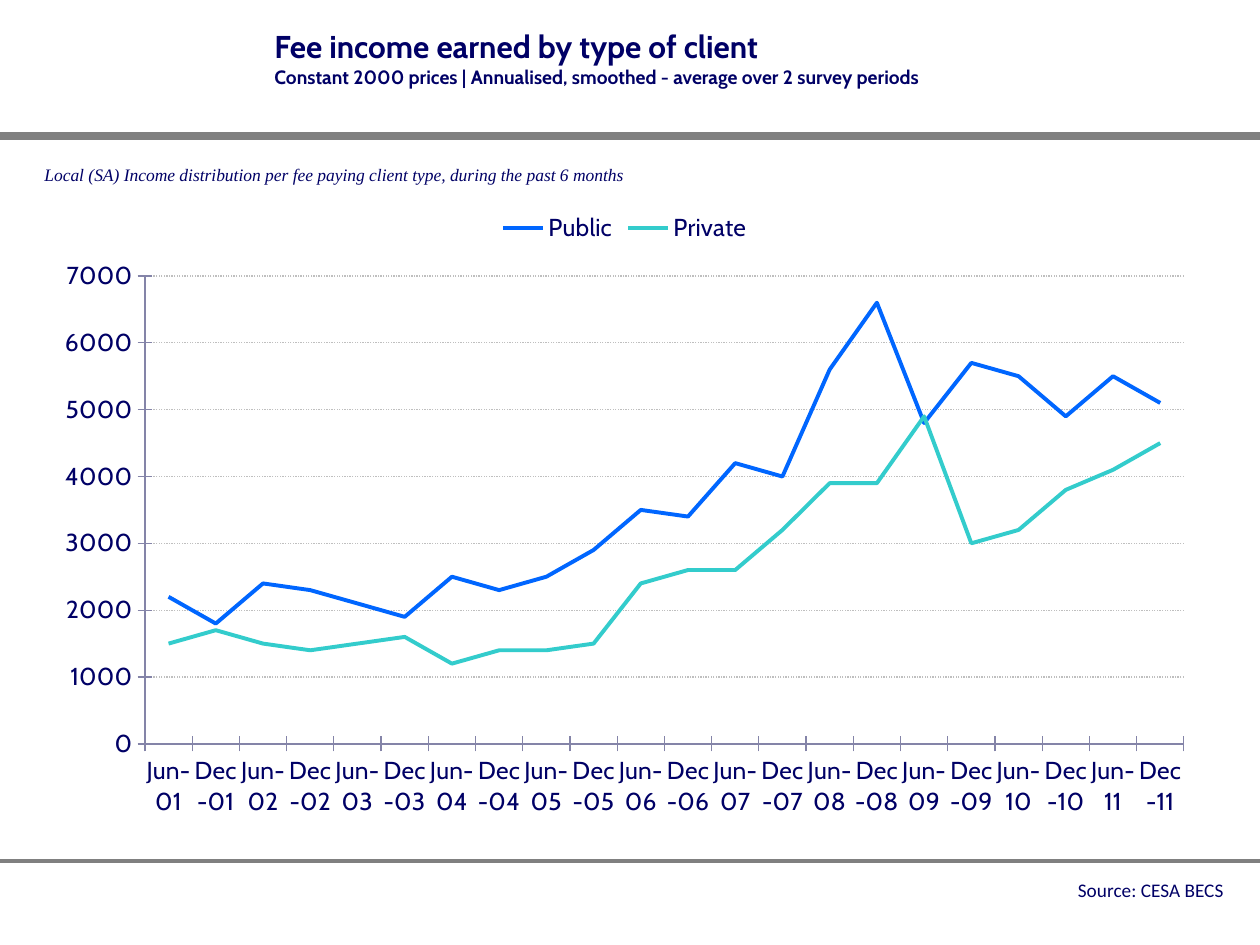
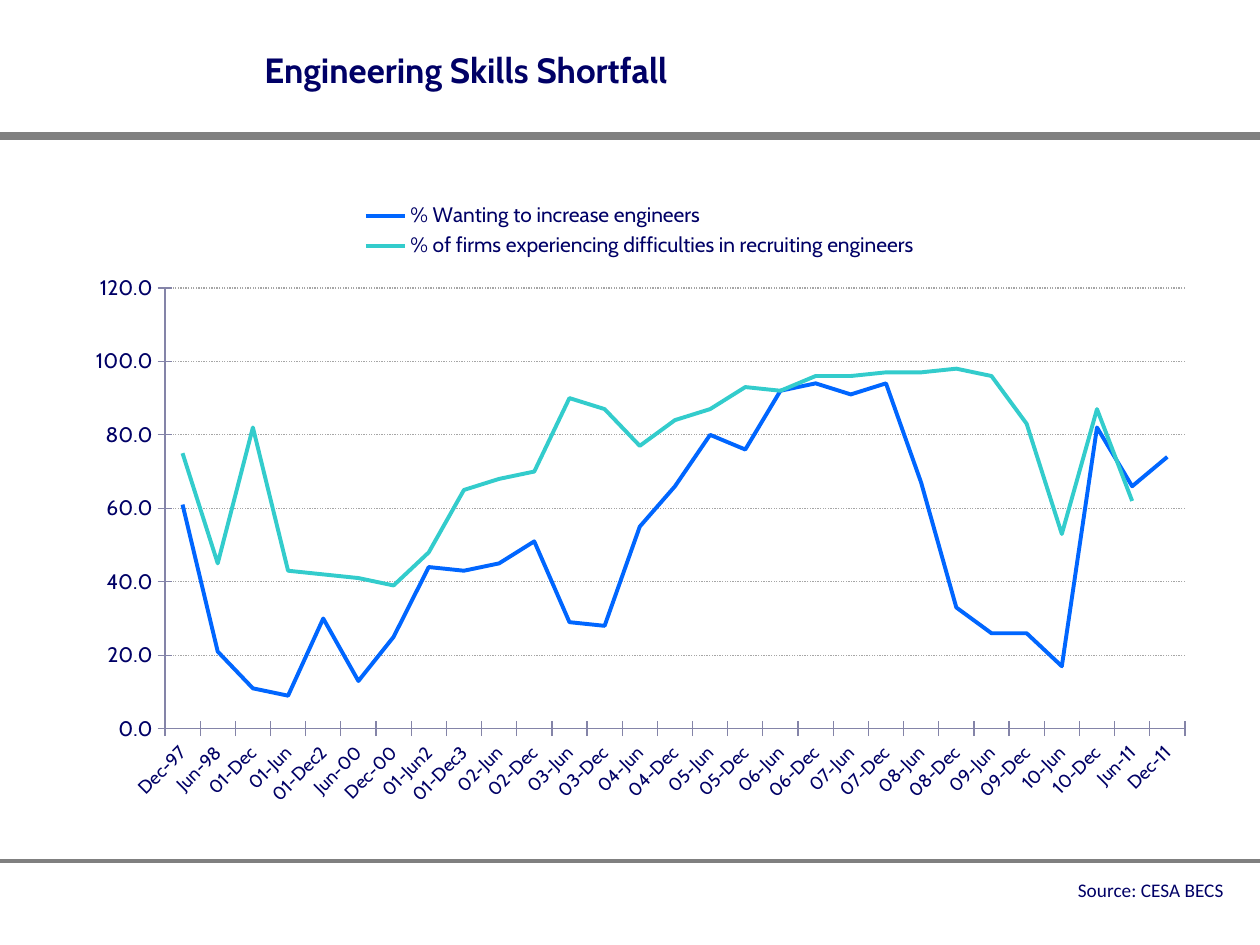
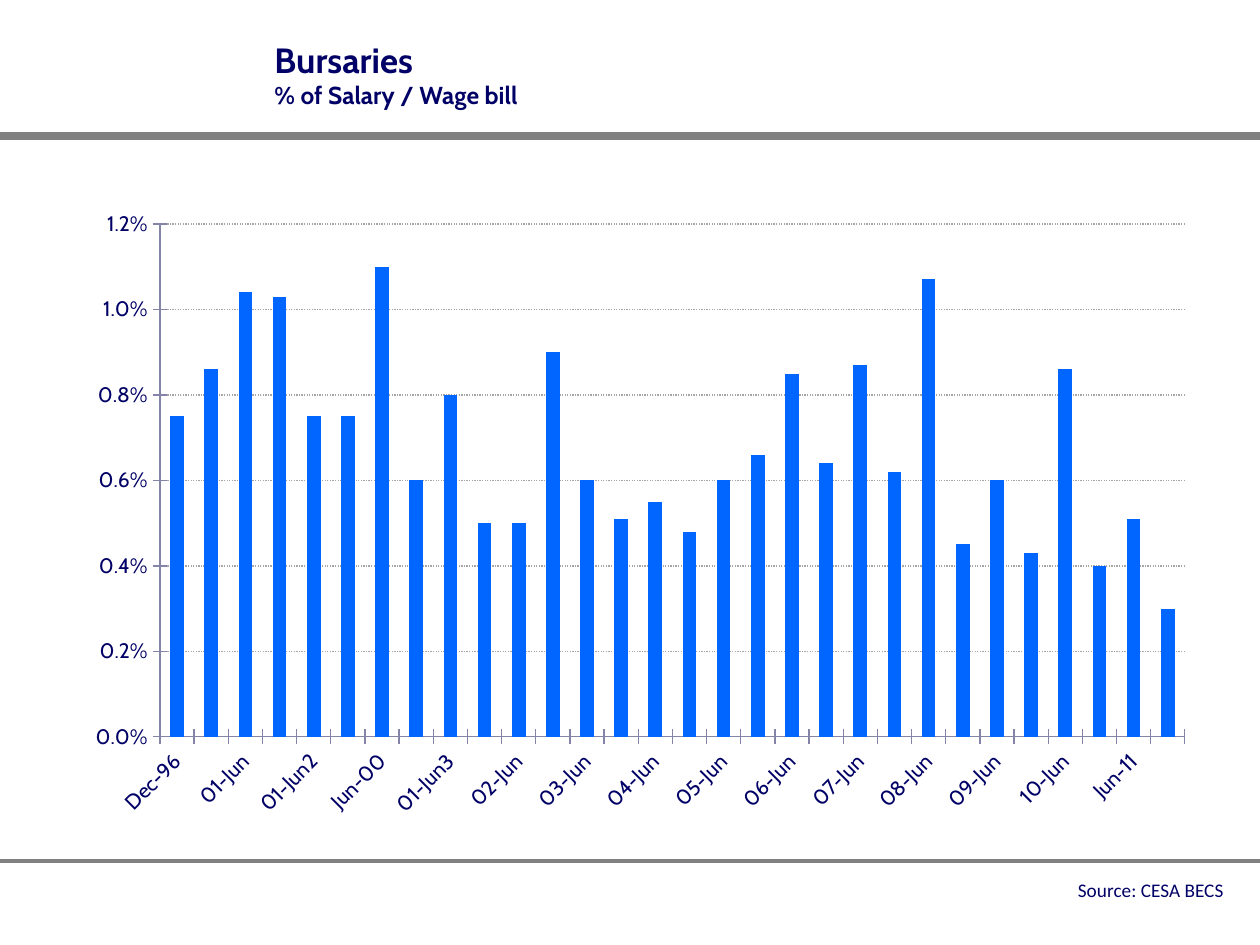
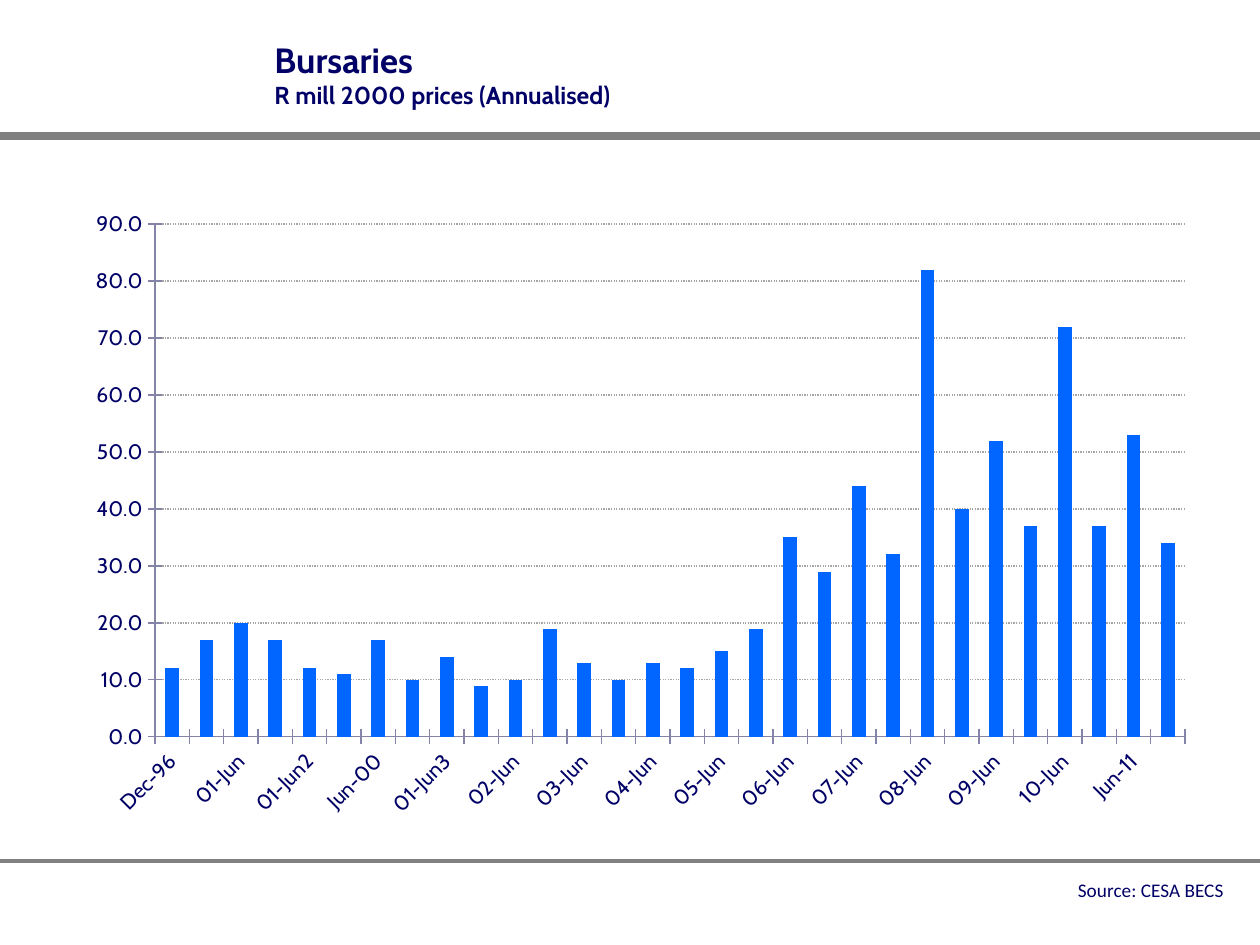
from dataclasses import dataclass
from typing import Optional

import pptx
import pptx.chart.data
import pptx.dml.color
import pptx.enum.chart
import pptx.enum.dml
import pptx.enum.shapes
import pptx.enum.text
import pptx.oxml
import pptx.oxml.ns
import pptx.util

PX = 914400 / 126
SLIDE_W, SLIDE_H = 1260, 945
NAVY, GREY, AXIS = "000066", "808080", "8484A8"
BLUE, TEAL = "0066FF", "33CCCC"
HEAD_FONT, NOTE_FONT, SOURCE_FONT = "Cabin", "Times New Roman", "Calibri"
LINE = pptx.enum.chart.XL_CHART_TYPE.LINE
COLUMN = pptx.enum.chart.XL_CHART_TYPE.COLUMN_CLUSTERED


@dataclass(frozen=True)
class Box:
    x: int
    y: int
    w: int
    h: int


@dataclass(frozen=True)
class Line:
    text: str
    size: float
    font: str = HEAD_FONT
    bold: bool = False
    italic: bool = False


@dataclass(frozen=True)
class Rule:
    y: int
    width: float


@dataclass(frozen=True)
class Series:
    name: str
    values: list[Optional[float]]
    color: str = BLUE


@dataclass(frozen=True)
class ChartSpec:
    kind: pptx.enum.chart.XL_CHART_TYPE
    box: Box
    plot: Box
    categories: list[str]
    series: list[Series]
    top: float
    step: float
    number_format: str
    size: float = 12
    category_size: float = 12
    grid: str = "A6A6A6"
    rotation: int = -45


@dataclass(frozen=True)
class Page:
    title_box: Box
    title: list[Line]
    chart: ChartSpec
    note: Optional[Line] = None


RULES = [Rule(136, 5), Rule(861, 2)]
SOURCE_BOX = Box(1063, 872, 173, 37)
SOURCE = Line("Source: CESA BECS", 11, SOURCE_FONT)
NOTE_BOX = Box(32, 158, 614, 34)
BURSARY_TITLE_BOX = Box(262, 32, 851, 84)
BURSARY_CHART_BOX = Box(73, 199, 1134, 630)

HALF_YEARS = [f"{month}-{year:02d}" for year in range(1, 12) for month in ("Jun", "Dec")]
RECENT = [f"{year:02d}-{month}" for year in range(2, 11) for month in ("Jun", "Dec")]
RECENT += ["Jun-11", "Dec-11"]
SKILL_PERIODS = ["Dec-97", "Jun-98", "01-Dec", "01-Jun", "01-Dec2", "Jun-00", "Dec-00",
                 "01-Jun2", "01-Dec3"] + RECENT
BURSARY_PERIODS = ["Dec-96", "Dec-97", "01-Jun", "01-Dec", "01-Jun2", "Dec-99", "Jun-00",
                   "Dec-00", "01-Jun3", "01-Dec4"] + RECENT

PAGES = [
    Page(
        Box(262, 21, 945, 74),
        [Line("Fee income earned by type of client", 18, bold=True),
         Line("Constant 2000 prices | Annualised, smoothed - average over 2 survey periods",
              11, bold=True)],
        ChartSpec(
            LINE, Box(42, 199, 1166, 630), Box(145, 276, 1039, 468), HALF_YEARS,
            [Series("Public", [2200, 1800, 2400, 2300, 2100, 1900, 2500, 2300, 2500, 2900, 3500,
                               3400, 4200, 4000, 5600, 6600, 4800, 5700, 5500, 4900, 5500, 5100]),
             Series("Private", [1500, 1700, 1500, 1400, 1500, 1600, 1200, 1400, 1400, 1500, 2400,
                                2600, 2600, 3200, 3900, 3900, 4900, 3000, 3200, 3800, 4100, 4500],
                    TEAL)],
            7000, 1000, "0", size=14, category_size=14, grid="BFBFBF", rotation=0),
        Line("Local (SA) Income distribution per fee paying client type, during the past 6 months",
             10, NOTE_FONT, italic=True),
    ),
    Page(
        Box(252, 42, 882, 55),
        [Line("Engineering Skills Shortfall", 20, bold=True)],
        ChartSpec(
            LINE, Box(73, 189, 1134, 630), Box(165, 288, 1020, 441), SKILL_PERIODS,
            [Series("% Wanting to increase engineers",
                    [61, 21, 11, 9, 30, 13, 25, 44, 43, 45, 51, 29, 28, 55, 66, 80, 76, 92, 94,
                     91, 94, 67, 33, 26, 26, 17, 82, 66, 74]),
             Series("% of firms experiencing difficulties in recruiting engineers",
                    [75, 45, 82, 43, 42, 41, 39, 48, 65, 68, 70, 90, 87, 77, 84, 87, 93, 92, 96,
                     96, 97, 97, 98, 96, 83, 53, 87, 62, None], TEAL)],
            120, 20, "0.0", category_size=10.5),
    ),
    Page(
        BURSARY_TITLE_BOX,
        [Line("Bursaries", 20, bold=True), Line("% of Salary / Wage bill", 14, bold=True)],
        ChartSpec(
            COLUMN, BURSARY_CHART_BOX, Box(160, 224, 1025, 513), BURSARY_PERIODS,
            [Series("Series 1",
                    [0.0075, 0.0086, 0.0104, 0.0103, 0.0075, 0.0075, 0.011, 0.006, 0.008, 0.005,
                     0.005, 0.009, 0.006, 0.0051, 0.0055, 0.0048, 0.006, 0.0066, 0.0085, 0.0064,
                     0.0087, 0.0062, 0.0107, 0.0045, 0.006, 0.0043, 0.0086, 0.004, 0.0051,
                     0.003])],
            0.012, 0.002, "0.0%"),
    ),
    Page(
        BURSARY_TITLE_BOX,
        [Line("Bursaries", 20, bold=True), Line("R mill 2000 prices (Annualised)", 14, bold=True)],
        ChartSpec(
            COLUMN, BURSARY_CHART_BOX, Box(155, 224, 1030, 513), BURSARY_PERIODS,
            [Series("Series 1",
                    [12, 17, 20, 17, 12, 11, 17, 10, 14, 9, 10, 19, 13, 10, 13, 12, 15, 19, 35,
                     29, 44, 32, 82, 40, 52, 37, 72, 37, 53, 34])],
            90, 10, "0.0"),
    ),
]


def px(value: float) -> int:
    return round(value * PX)


def place(box: Box) -> tuple[int, int, int, int]:
    return px(box.x), px(box.y), px(box.w), px(box.h)


def rgb(color: str) -> pptx.dml.color.RGBColor:
    return pptx.dml.color.RGBColor.from_string(color)


def style_font(font, size: float, name: str = HEAD_FONT) -> None:
    font.size = pptx.util.Pt(size)
    font.name = name
    font.color.rgb = rgb(NAVY)


def style_line(line, color: str, width: float) -> None:
    line.color.rgb = rgb(color)
    line.width = pptx.util.Pt(width)


def add_rule(s, rule: Rule) -> None:
    sp = s.shapes.add_connector(pptx.enum.shapes.MSO_CONNECTOR.STRAIGHT,
                                0, px(rule.y), px(SLIDE_W), px(rule.y))
    style_line(sp.line, GREY, rule.width)
    sp._element.spPr.append(pptx.oxml.parse_xml(
        f"<a:effectLst {pptx.oxml.ns.nsdecls('a')}/>"))


def add_text(s, box: Box, lines: list[Line], wrap: bool = True, right: bool = False) -> None:
    tf = s.shapes.add_textbox(*place(box)).text_frame
    tf.word_wrap = wrap
    tf.auto_size = pptx.enum.text.MSO_AUTO_SIZE.SHAPE_TO_FIT_TEXT
    for i, line in enumerate(lines):
        p = tf.add_paragraph() if i else tf.paragraphs[0]
        if right:
            p.alignment = pptx.enum.text.PP_ALIGN.RIGHT
        r = p.add_run()
        r.text = line.text
        style_font(r.font, line.size, line.font)
        r.font.bold = line.bold
        r.font.italic = line.italic


def set_plot_area(chart, box: Box, plot: Box) -> None:
    area = chart.element.xpath("c:chart/c:plotArea")[0]
    for old in area.xpath("c:layout"):
        area.remove(old)
    shares = {"x": (plot.x - box.x) / box.w, "y": (plot.y - box.y) / box.h,
              "w": plot.w / box.w, "h": plot.h / box.h}
    modes = "".join(f'<c:{key}Mode val="edge"/>' for key in "xy")
    sizes = "".join(f'<c:{key} val="{share:.4f}"/>' for key, share in shares.items())
    area.insert(0, pptx.oxml.parse_xml(
        f"<c:layout {pptx.oxml.ns.nsdecls('c')}><c:manualLayout>"
        f'<c:layoutTarget val="inner"/>{modes}{sizes}</c:manualLayout></c:layout>'))


def style_axes(chart, spec: ChartSpec) -> None:
    for axis, size in ((chart.category_axis, spec.category_size), (chart.value_axis, spec.size)):
        axis.major_tick_mark = pptx.enum.chart.XL_TICK_MARK.CROSS
        style_line(axis.format.line, AXIS, 0.75)
        style_font(axis.tick_labels.font, size)
    body = chart.category_axis._element.xpath("c:txPr/a:bodyPr")[0]
    body.set("rot", str(spec.rotation * 60000))
    body.set("vert", "horz")
    chart.category_axis.has_major_gridlines = False
    axis = chart.value_axis
    axis.minimum_scale, axis.maximum_scale, axis.major_unit = 0, spec.top, spec.step
    axis.tick_labels.number_format = spec.number_format
    axis.tick_labels.number_format_is_linked = False
    axis.has_major_gridlines = True
    grid = axis.major_gridlines.format.line
    style_line(grid, spec.grid, 0.75)
    grid.dash_style = pptx.enum.dml.MSO_LINE.ROUND_DOT


def add_chart(s, spec: ChartSpec) -> None:
    data = pptx.chart.data.CategoryChartData(number_format=spec.number_format)
    data.categories = spec.categories
    for series in spec.series:
        data.add_series(series.name, series.values)
    chart = s.shapes.add_chart(spec.kind, *place(spec.box), data).chart
    style_font(chart.font, spec.size)
    chart.has_title = False
    chart.has_legend = len(spec.series) > 1
    if chart.has_legend:
        chart.legend.position = pptx.enum.chart.XL_LEGEND_POSITION.TOP
        chart.legend.include_in_layout = False
        style_font(chart.legend.font, spec.size)
    plot = chart.plots[0]
    plot.vary_by_categories = False
    if spec.kind == COLUMN:
        plot.gap_width = 150
    for drawn, series in zip(plot.series, spec.series):
        if spec.kind == LINE:
            drawn.smooth = False
            drawn.marker.style = pptx.enum.chart.XL_MARKER_STYLE.NONE
            style_line(drawn.format.line, series.color, 2.25)
        else:
            drawn.format.fill.solid()
            drawn.format.fill.fore_color.rgb = rgb(series.color)
    style_axes(chart, spec)
    set_plot_area(chart, spec.box, spec.plot)


def add_page(prs, page: Page) -> None:
    s = prs.slides.add_slide(prs.slide_layouts[6])
    for rule in RULES:
        add_rule(s, rule)
    add_text(s, page.title_box, page.title)
    if page.note:
        add_text(s, NOTE_BOX, [page.note], wrap=False)
    add_chart(s, page.chart)
    add_text(s, SOURCE_BOX, [SOURCE], wrap=False, right=True)


def main() -> None:
    prs = pptx.Presentation()
    prs.slide_width, prs.slide_height = px(SLIDE_W), px(SLIDE_H)
    for page in PAGES:
        add_page(prs, page)
    prs.save("out.pptx")


if __name__ == "__main__":
    main()
